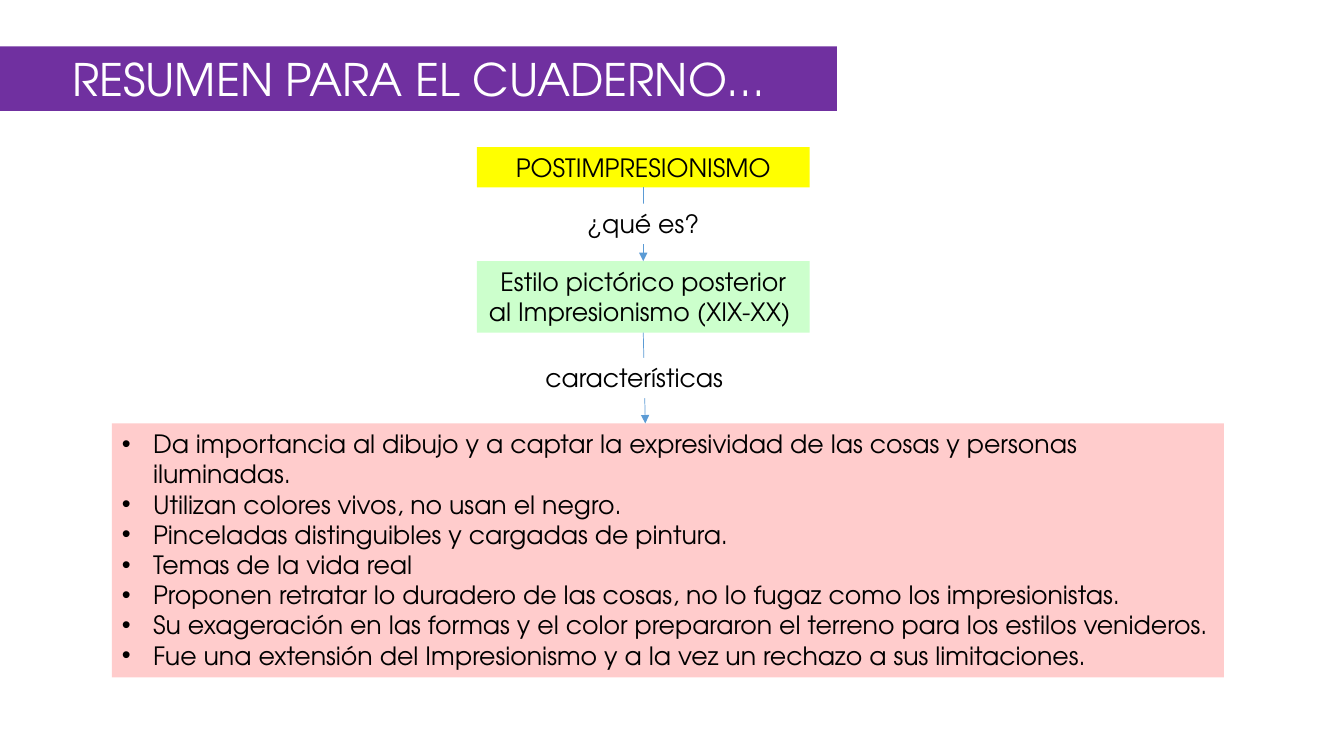
from dataclasses import dataclass

from lxml import etree
from pptx import Presentation
from pptx.dml.color import RGBColor
from pptx.enum.shapes import MSO_CONNECTOR
from pptx.enum.text import MSO_ANCHOR, MSO_AUTO_SIZE, PP_ALIGN
from pptx.oxml.ns import qn
from pptx.shapes.autoshape import Shape
from pptx.shapes.connector import Connector
from pptx.slide import Slide
from pptx.text.text import _Paragraph
from pptx.util import Inches, Pt

STRAIGHT = MSO_CONNECTOR.STRAIGHT
TOP_ANCHOR = MSO_ANCHOR.TOP
GROW = MSO_AUTO_SIZE.SHAPE_TO_FIT_TEXT
CENTER, LEFT = PP_ALIGN.CENTER, PP_ALIGN.LEFT
TOP_SIDE, BOTTOM_SIDE = 0, 2


@dataclass(frozen=True)
class Theme:
    font: str = "TeX Gyre Adventor"
    bullet_font: str = "Arial"
    title_size: int = 32
    body_size: int = 18
    line_width: float = 0.5
    purple: str = "7030A0"
    yellow: str = "FFFF00"
    green: str = "CCFFCC"
    pink: str = "FFCCCC"
    white: str = "FFFFFF"
    black: str = "000000"
    blue: str = "5B9BD5"


THEME = Theme()


@dataclass(frozen=True)
class TextBlock:
    lines: tuple[str, ...]
    left: float
    top: float
    width: float
    height: float
    fill: str
    color: str = THEME.black
    size: int = THEME.body_size
    bulleted: bool = False


NODE_LEFT, NODE_WIDTH, LINE_HEIGHT = 4.73, 3.3, 0.4

TITLE = TextBlock(("RESUMEN PARA EL CUADERNO…",), 0, 0.46, 8.3, 0.64,
                  THEME.purple, THEME.white, THEME.title_size)
TOPIC = TextBlock(("POSTIMPRESIONISMO",),
                  NODE_LEFT, 1.46, NODE_WIDTH, LINE_HEIGHT, THEME.yellow)
DEFINITION = TextBlock(("Estilo pictórico posterior al Impresionismo (XIX-XX) ",),
                       NODE_LEFT, 2.59, NODE_WIDTH, 0.71, THEME.green)
FEATURES = TextBlock((
    "Da importancia al dibujo y a captar la expresividad de las cosas y personas iluminadas.",
    "Utilizan colores vivos, no usan el negro.",
    "Pinceladas distinguibles y cargadas de pintura.",
    "Temas de la vida real",
    "Proponen retratar lo duradero de las cosas, no lo fugaz como los impresionistas.",
    "Su exageración en las formas y el color prepararon el terreno para los estilos venideros.",
    "Fue una extensión del Impresionismo y a la vez un rechazo a sus limitaciones.",
), 1.11, 4.2, 11.03, 2.52, THEME.pink, bulleted=True)
LINK_LABELS = (
    TextBlock(("características",), 4.64, 3.55, NODE_WIDTH, LINE_HEIGHT, THEME.white),
    TextBlock(("¿qué es?",), NODE_LEFT, 2.02, NODE_WIDTH, LINE_HEIGHT, THEME.white),
)


def add_bullet(para: _Paragraph) -> None:
    properties = para._p.get_or_add_pPr()
    properties.set("marL", str(Inches(0.31)))
    properties.set("indent", str(-Inches(0.31)))
    etree.SubElement(properties, qn("a:buFont"), typeface=THEME.bullet_font)
    etree.SubElement(properties, qn("a:buChar"), char="•")


def add_block(page: Slide, block: TextBlock) -> Shape:
    box = page.shapes.add_textbox(Inches(block.left), Inches(block.top),
                                  Inches(block.width), Inches(block.height))
    box.fill.solid()
    box.fill.fore_color.rgb = RGBColor.from_string(block.fill)
    frame = box.text_frame
    frame.word_wrap = True
    frame.auto_size = GROW
    frame.vertical_anchor = TOP_ANCHOR
    frame.text = "\n".join(block.lines)
    for para in frame.paragraphs:
        para.alignment = LEFT if block.bulleted else CENTER
        if block.bulleted:
            add_bullet(para)
        para.font.name = THEME.font
        para.font.size = Pt(block.size)
        para.font.color.rgb = RGBColor.from_string(block.color)
    return box


def add_arrow(page: Slide, source: Shape, end_x: float, end_y: float) -> Connector:
    arrow = page.shapes.add_connector(STRAIGHT, 0, 0, Inches(end_x), Inches(end_y))
    arrow.begin_connect(source, BOTTOM_SIDE)
    arrow.line.color.rgb = RGBColor.from_string(THEME.blue)
    arrow.line.width = Pt(THEME.line_width)
    etree.SubElement(arrow.line._get_or_add_ln(), qn("a:tailEnd"), type="triangle")
    etree.SubElement(arrow._element.spPr, qn("a:effectLst"))
    return arrow


def main() -> None:
    deck = Presentation()
    deck.slide_width, deck.slide_height = Inches(13.33), Inches(7.5)
    page = deck.slides.add_slide(deck.slide_layouts[6])

    add_block(page, TITLE)
    topic = add_block(page, TOPIC)
    definition = add_block(page, DEFINITION)
    add_block(page, FEATURES)

    to_definition = add_arrow(page, topic, 6.38, DEFINITION.top)
    to_definition.end_connect(definition, TOP_SIDE)
    add_arrow(page, definition, 6.4, FEATURES.top)

    for label in LINK_LABELS:
        add_block(page, label)
    deck.save("out.pptx")


if __name__ == "__main__":
    main()
